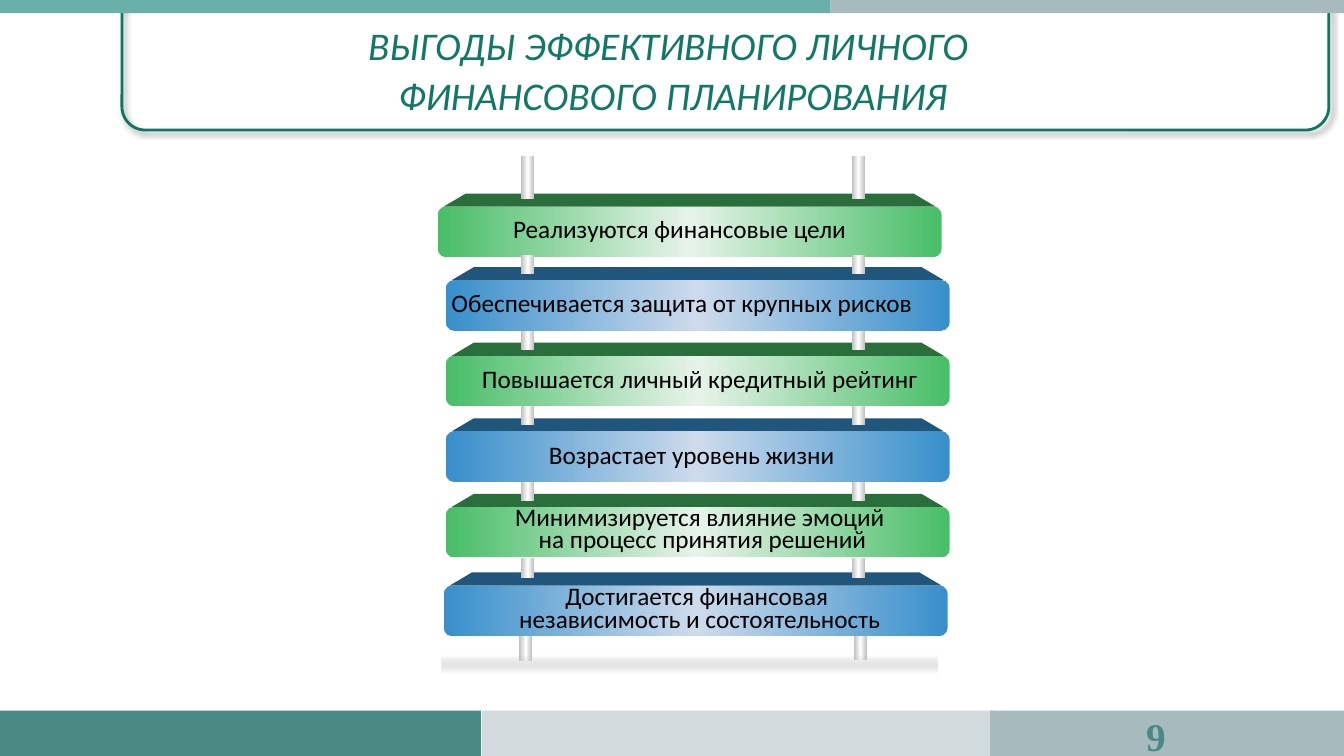
from copy import deepcopy

from lxml.etree import SubElement
from pptx import Presentation
from pptx.dml.color import RGBColor
from pptx.enum.shapes import MSO_SHAPE as SHAPE
from pptx.enum.text import MSO_ANCHOR as ANCHOR, MSO_AUTO_SIZE as AUTO, PP_ALIGN as ALIGN
from pptx.oxml.ns import qn
from pptx.util import Inches, Pt

BLACK = RGBColor(0x00, 0x00, 0x00)
FRAME = RGBColor(0x10, 0x76, 0x62)
TITLE = RGBColor(0x10, 0x78, 0x64)
AQUA = RGBColor(0x6A, 0xB0, 0xAA)
TEAL = RGBColor(0x49, 0x8A, 0x85)
GREY = RGBColor(0xA7, 0xBA, 0xBE)
PALE = RGBColor(0xD1, 0xDA, 0xDD)
SILVER = RGBColor(0xBF, 0xBF, 0xBF)
WHITE = RGBColor(0xFF, 0xFF, 0xFF)
SHADE = RGBColor(0xB2, 0xB2, 0xB2)
SHADE_MID = RGBColor(0xD2, 0xD2, 0xD2)
GREEN = (RGBColor(0x48, 0xBE, 0x67), RGBColor(0xE7, 0xF3, 0xE9), RGBColor(0x2A, 0x6E, 0x3C))
BLUE = (RGBColor(0x37, 0x8F, 0xCB), RGBColor(0xCE, 0xDB, 0xEC), RGBColor(0x20, 0x55, 0x7C))

STRIPS = [
    (0, -0.09, 8.24, 0.22, AQUA),
    (8.24, -0.09, 5.09, 0.22, GREY),
    (0, 7.05, 4.77, 0.45, TEAL),
    (4.78, 7.05, 5.09, 0.45, PALE),
    (9.82, 7.05, 3.52, 0.45, GREY),
]
BARS = [
    (4.34, 2.05, GREEN, "Реализуются финансовые цели", (4.99, 2.1, 4.17, 0.37), ALIGN.LEFT),
    (4.42, 2.78, BLUE, "Обеспечивается защита от крупных рисков",
     (4.38, 2.84, 4.96, 0.37), ALIGN.LEFT),
    (4.42, 3.53, GREEN, "Повышается личный кредитный рейтинг",
     (4.46, 3.59, 4.96, 0.37), ALIGN.CENTER),
    (4.42, 4.28, BLUE, "Возрастает уровень жизни", (4.3, 4.34, 5.12, 0.37), ALIGN.CENTER),
    (4.42, 5.03, GREEN, "Минимизируется влияние эмоций\n на процесс принятия решений",
     (4.46, 5, 4.96, 0.56), ALIGN.CENTER),
    (4.4, 5.81, BLUE, "Достигается финансовая \nнезависимость и состоятельность",
     (4.54, 5.79, 4.8, 0.56), ALIGN.CENTER),
]
BAR_W, BAR_H, LID_H = 5, 0.5, 0.13
POLE_W = 0.13
POLE_X = (5.17, 8.45)
JOINT_Y = (2.53, 3.28, 4.03, 4.78, 5.54)


def add_shape(s, kind, x, y, w, h, color=None):
    sp = s.shapes.add_shape(kind, Inches(x), Inches(y), Inches(w), Inches(h))
    sp.shadow.inherit = False
    sp.line.fill.background()
    if color is None:
        sp.fill.background()
    else:
        sp.fill.solid()
        sp.fill.fore_color.rgb = color
    return sp


def fill_mirrored(sp, edge, middle, angle=0):
    sp.fill.gradient()
    sp.fill.gradient_angle = angle
    stops = sp.element.spPr.find(qn("a:gradFill")).find(qn("a:gsLst"))
    stops.insert(1, deepcopy(stops[0]))
    for stop, position, color in zip(sp.fill.gradient_stops, (0, 0.5, 1), (edge, middle, edge)):
        stop.position = position
        stop.color.rgb = color
    return stops


def add_frame(s):
    sp = add_shape(s, SHAPE.ROUNDED_RECTANGLE, 1.21, -0.1, 11.97, 1.39)
    sp.line.color.rgb = FRAME
    sp.line.width = Pt(2)
    effects = sp.element.spPr.find(qn("a:effectLst"))
    shadow = SubElement(effects, qn("a:outerShdw"), blurRad=str(Pt(4)), dist=str(Pt(3)),
                        dir="2700000", algn="tl", rotWithShape="0")
    color = SubElement(shadow, qn("a:srgbClr"), val=str(BLACK))
    SubElement(color, qn("a:alpha"), val="40000")


def format_text(tf, size, color, align, spacing=None, indents=None, font="Calibri"):
    tf.word_wrap = True
    for p in tf.paragraphs:
        p.alignment = align
        if spacing:
            p.line_spacing = spacing
        if indents:
            left, first = indents
            pPr = p._p.get_or_add_pPr()
            pPr.set("marL", str(Inches(left)))
            pPr.set("indent", str(Inches(first)))
        for r in p.runs:
            r.font.name = font
            r.font.size = Pt(size)
            r.font.color.rgb = color


def add_text(s, text, box):
    tf = s.shapes.add_textbox(*map(Inches, box)).text_frame
    tf.text = text
    return tf


def add_title(s):
    title = s.shapes.title
    title.left, title.top, title.width, title.height = map(Inches, (1.67, 0.13, 10, 1.11))
    tf = title.text_frame
    tf.text = "ВЫГОДЫ ЭФФЕКТИВНОГО ЛИЧНОГО \nФИНАНСОВОГО ПЛАНИРОВАНИЯ"
    tf.vertical_anchor = ANCHOR.TOP
    tf.auto_size = AUTO.SHAPE_TO_FIT_TEXT
    format_text(tf, 28, TITLE, ALIGN.CENTER, 1.07, (0, -0.5))
    for p in tf.paragraphs:
        p.runs[0].font.italic = True


def add_bar(s, x, y, colors, text, box, align):
    edge, middle, dark = colors
    corners = [(x + 0.06, y), (x + 0.28, y - LID_H),
               (x + BAR_W - 0.28, y - LID_H), (x + BAR_W - 0.06, y)]
    points = [(Inches(a), Inches(b)) for a, b in corners]
    outline = s.shapes.build_freeform(*points[0])
    outline.add_line_segments(points[1:], close=True)
    lid = outline.convert_to_shape()
    lid.shadow.inherit = False
    lid.fill.solid()
    lid.fill.fore_color.rgb = dark
    lid.line.fill.background()

    sp = add_shape(s, SHAPE.ROUNDED_RECTANGLE, x, y, BAR_W, BAR_H)
    sp.adjustments[0] = 0.167
    fill_mirrored(sp, edge, middle)

    tf = add_text(s, text, box)
    tf.auto_size = AUTO.SHAPE_TO_FIT_TEXT
    spacing = Pt(16) if "\n" in text else 0.9
    format_text(tf, 18, BLACK, align, spacing, (0.5, -0.5))


def add_pole(s, x, y, h):
    fill_mirrored(add_shape(s, SHAPE.RECTANGLE, x, y, POLE_W, h), SILVER, WHITE)


def add_ground(s):
    sp = add_shape(s, SHAPE.RECTANGLE, 4.38, 6.51, 4.92, 0.17)
    stops = fill_mirrored(sp, SHADE, SHADE_MID, 90)
    for stop, alpha in zip(stops, (0, 58000, 0)):
        SubElement(stop[0], qn("a:alpha"), val=str(alpha))


def add_number(s):
    tf = add_text(s, "9", (10.83, 7.1, 0.83, 0.4))
    tf.vertical_anchor = ANCHOR.MIDDLE
    format_text(tf, 28, TEAL, ALIGN.RIGHT, font="Times New Roman")
    tf.paragraphs[0].runs[0].font.bold = True


def main():
    prs = Presentation()
    prs.slide_width, prs.slide_height = Inches(13.33), Inches(7.5)
    s = prs.slides.add_slide(prs.slide_layouts[5])
    add_frame(s)
    for x, y, w, h, color in STRIPS:
        add_shape(s, SHAPE.RECTANGLE, x, y, w, h, color)
    add_title(s)
    add_pole(s, 5.15, 6.14, 0.42)
    add_pole(s, 8.47, 6.13, 0.42)
    for bar in BARS:
        add_bar(s, *bar)
    for x in POLE_X:
        add_pole(s, x, 1.55, 0.42)
        for y in JOINT_Y:
            add_pole(s, x, y, 0.19)
    add_ground(s)
    add_number(s)
    prs.save("out.pptx")


if __name__ == "__main__":
    main()
